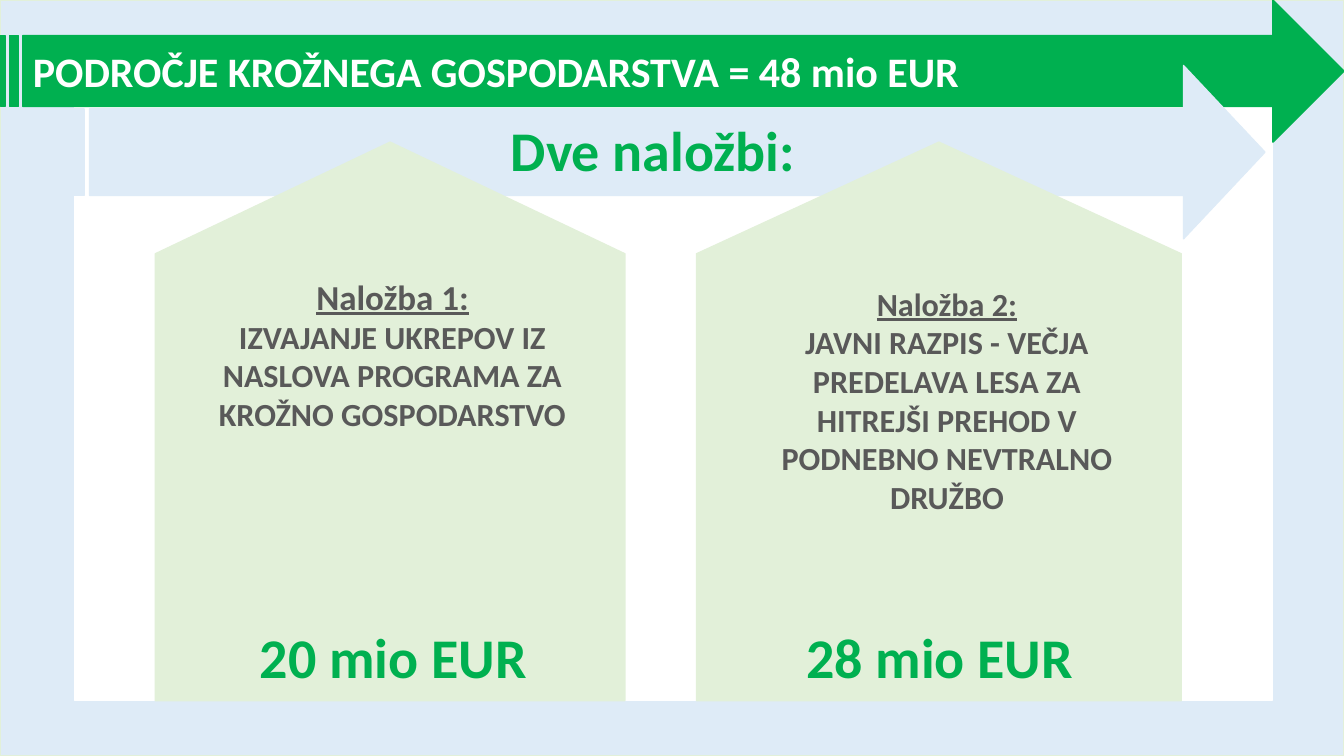
from pptx import Presentation
from pptx.dml.color import RGBColor
from pptx.enum.shapes import MSO_SHAPE
from pptx.enum.text import MSO_ANCHOR, PP_ALIGN
from pptx.util import Pt

GREEN, PALE_GREEN, PALE_BLUE = "00B050", "E2F0D9", "DEEBF7"
WHITE, GREY = "FFFFFF", "595959"

deck = Presentation()
deck.slide_width, deck.slide_height = Pt(960), Pt(540)
page = deck.slides.add_slide(deck.slide_layouts[6])


def add_block(kind, left, top, width, height, fill, line=None):
    block = page.shapes.add_shape(kind, Pt(left), Pt(top), Pt(width), Pt(height))
    block.shadow.inherit = False
    block.fill.solid()
    block.fill.fore_color.rgb = RGBColor.from_string(fill)
    block.line.color.rgb = RGBColor.from_string(line or fill)
    block.line.width = Pt(1)
    return block


def write(box, lines, color, align=PP_ALIGN.LEFT, anchor=MSO_ANCHOR.TOP):
    """Fill a shape with bold paragraphs given as (text, size, underlined)."""
    frame = box.text_frame
    frame.word_wrap = True
    frame.vertical_anchor = anchor
    for number, (text, size, underlined) in enumerate(lines):
        para = frame.add_paragraph() if number else frame.paragraphs[0]
        para.alignment = align
        span = para.add_run()
        span.text = text
        span.font.name = "Calibri"
        span.font.size = Pt(size)
        span.font.bold = True
        span.font.underline = underlined
        span.font.color.rgb = RGBColor.from_string(color)


# Background, panel and the two arrows
add_block(MSO_SHAPE.RECTANGLE, 0, 0, 960, 540, PALE_BLUE, PALE_GREEN)
add_block(MSO_SHAPE.FLOWCHART_PROCESS, 53.3, 46.8, 855.4, 453.6, WHITE)
title_arrow = add_block(MSO_SHAPE.STRIPED_RIGHT_ARROW, 0.5, 0, 959.5, 101.5, GREEN)
write(title_arrow, [("PODROČJE KROŽNEGA GOSPODARSTVA = 48 mio EUR", 30, False)],
      WHITE, anchor=MSO_ANCHOR.MIDDLE)
subtitle_arrow = add_block(MSO_SHAPE.STRIPED_RIGHT_ARROW, 44.6, 46.8, 859, 123.8, PALE_BLUE)
subtitle_arrow.adjustments[1] = 0.47
subtitle = page.shapes.add_textbox(Pt(357.8), Pt(79.2), Pt(257.8), Pt(55.4))
write(subtitle, [("Dve naložbi:", 40, False)], GREEN)

# House left and width, text box (left, top, width, height), heading, size, body, amount
investments = [
    (110.9, 335.5, (138.2, 193, 284.4, 242.6), "Naložba 1:", 25,
     "IZVAJANJE UKREPOV IZ NASLOVA PROGRAMA ZA KROŽNO GOSPODARSTVO", "20 mio EUR", 178.6),
    (497.5, 346.3, (545.8, 199.4, 261.4, 230.4), "Naložba 2:", 23,
     "JAVNI RAZPIS - VEČJA PREDELAVA LESA ZA HITREJŠI PREHOD V PODNEBNO NEVTRALNO DRUŽBO",
     "28 mio EUR", 568.8),
]
for left, width, text_area, heading, heading_size, body, amount, amount_left in investments:
    house = add_block(MSO_SHAPE.FLOWCHART_OFFPAGE_CONNECTOR, left, 101.5, width, 398.9, PALE_GREEN)
    house.rotation = 180
    description = page.shapes.add_textbox(*map(Pt, text_area))
    write(description, [(heading, heading_size, True), (body, 23, False)], GREY, PP_ALIGN.CENTER)
    amount_box = page.shapes.add_textbox(Pt(amount_left), Pt(441.4), Pt(217.4), Pt(55.4))
    write(amount_box, [(amount, 40, False)], GREEN)

deck.save("out.pptx")
